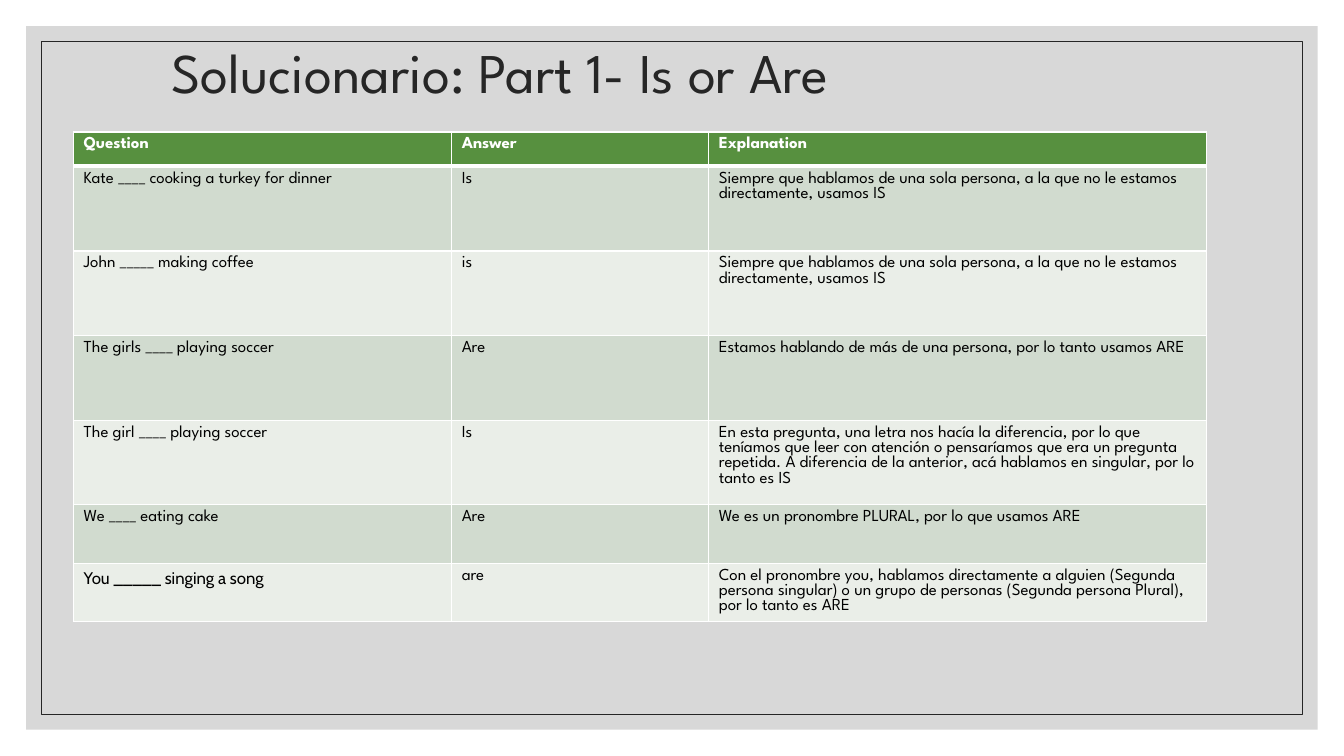
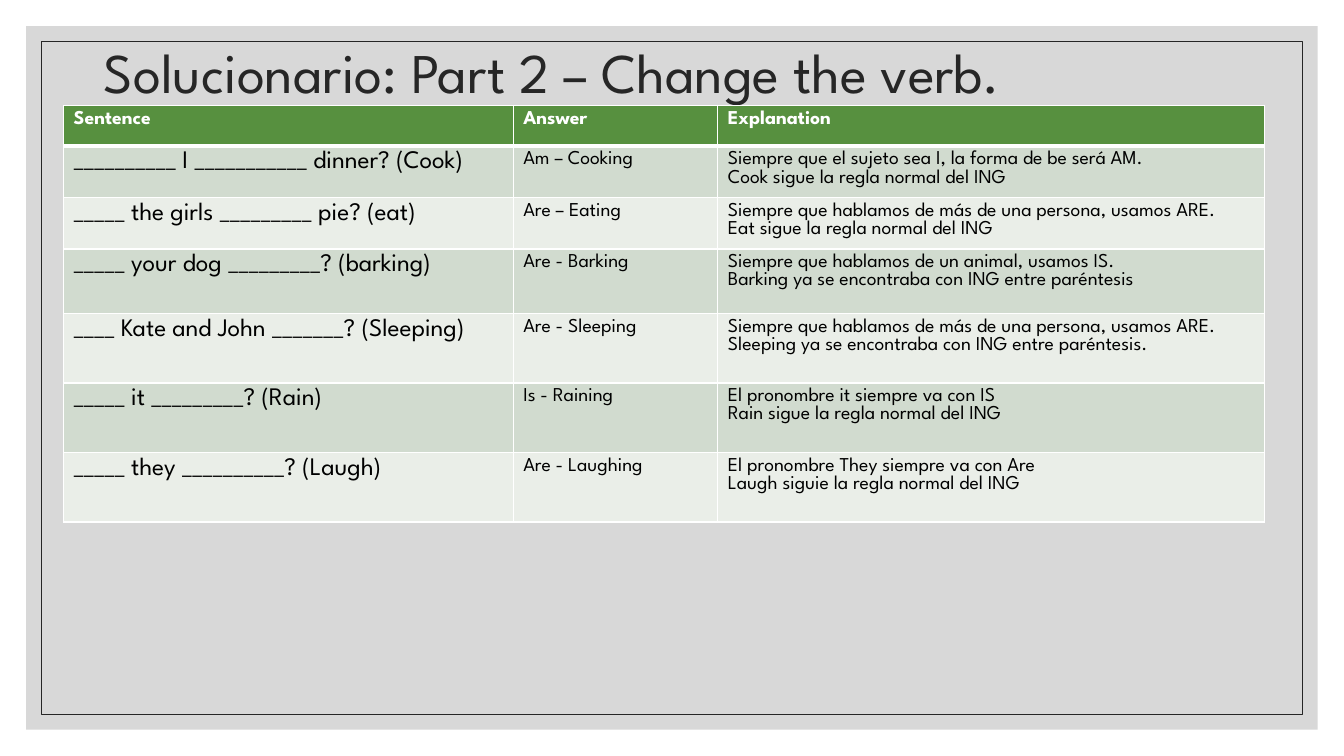
import pptx
import pptx.dml.color
import pptx.enum.shapes
import pptx.enum.text
import pptx.oxml
import pptx.oxml.ns
import pptx.util
from lxml import etree

Inches, Pt = pptx.util.Inches, pptx.util.Pt

# Shared look
FONT = "League Spartan"
WHITE, INK, BLACK = "FFFFFF", "262626", "000000"
PANEL, HEADER = "BFBFBF", "57903F"
BANDS = ("D1DBCF", "EAEEE8")


def rgb(value):
    return pptx.dml.color.RGBColor.from_string(value)


def add_run(p, text, size, color, bold=False, font=FONT):
    r = p.add_run()
    r.text = text
    r.font.size = Pt(size)
    r.font.name = font
    r.font.bold = bold
    r.font.color.rgb = rgb(color)


def add_frame(slide, inset):
    """Rectangle at an equal distance from all slide edges."""
    sp = slide.shapes.add_shape(
        pptx.enum.shapes.MSO_SHAPE.RECTANGLE, Inches(inset), Inches(inset),
        Inches(13.33 - 2 * inset), Inches(7.5 - 2 * inset))
    sp.shadow.inherit = False
    return sp


def build_layout(slide):
    """Draw the grey panel and thin border, then move them to the layout."""
    panel = add_frame(slide, 0.26)
    panel.fill.solid()
    panel.fill.fore_color.rgb = rgb(PANEL)
    panel.line.fill.background()
    color = panel.fill._xPr.find(".//" + pptx.oxml.ns.qn("a:srgbClr"))
    etree.SubElement(color, pptx.oxml.ns.qn("a:alpha"), val="60000")

    border = add_frame(slide, 0.41)
    border.fill.background()
    border.line.color.rgb = rgb(INK)
    border.line.width = Pt(0.5)

    tree = slide.slide_layout.shapes._spTree
    for i, sp in enumerate((panel, border)):
        tree.insert(2 + i, sp._element)


def add_title(slide, text, left):
    sp = slide.shapes.title
    sp.left, sp.top = Inches(left), Inches(0)
    sp.width, sp.height = Inches(11), Inches(1.5)
    tf = sp.text_frame
    tf.word_wrap = True
    tf.auto_size = pptx.enum.text.MSO_AUTO_SIZE.NONE
    tf.vertical_anchor = pptx.enum.text.MSO_ANCHOR.MIDDLE
    p = tf.paragraphs[0]
    p.alignment = pptx.enum.text.PP_ALIGN.LEFT
    p.line_spacing = 0.9
    add_run(p, text, 40, INK)


def set_borders(cell, top=1, bottom=1):
    tc_pr = cell._tc.get_or_add_tcPr()
    widths = {"lnL": 1, "lnR": 1, "lnT": top, "lnB": bottom}
    for i, (side, width) in enumerate(widths.items()):
        tc_pr.insert(i, pptx.oxml.parse_xml(
            f'<a:{side} {pptx.oxml.ns.nsdecls("a")} w="{Pt(width)}">'
            f'<a:solidFill><a:srgbClr val="{WHITE}"/></a:solidFill></a:{side}>'))


def add_answer_table(slide, left, top, cols, heights, rows, size,
                     first_size, fonts):
    """Header row plus banded rows; fonts maps (row, column) to a font."""
    table = slide.shapes.add_table(
        len(rows), len(cols), Inches(left), Inches(top),
        Inches(sum(cols)), Inches(sum(heights))).table
    for column, width in zip(table.columns, cols):
        column.width = Inches(width)
    for i, (row, height) in enumerate(zip(rows, heights)):
        table.rows[i].height = Inches(height)
        header = i == 0
        for j, text in enumerate(row):
            cell = table.cell(i, j)
            cell.fill.solid()
            cell.fill.fore_color.rgb = rgb(HEADER if header else BANDS[(i - 1) % 2])
            set_borders(cell, top=3 if i == 1 else 1, bottom=3 if header else 1)
            tf = cell.text_frame
            for k, line in enumerate(text.split("\n")):
                p = tf.add_paragraph() if k else tf.paragraphs[0]
                font = fonts.get((i, j), FONT)
                add_run(p, line, first_size if j == 0 and not header else size,
                        WHITE if header else BLACK, header, font)


def add_answer_slide(prs, title, title_left, **table):
    slide = prs.slides.add_slide(prs.slide_layouts[5])
    add_title(slide, title, title_left)
    add_answer_table(slide, **table)
    return slide


ONE_PERSON = ("Siempre que hablamos de una sola persona, a la que no le "
              "estamos directamente, usamos IS")
MANY = "Siempre que hablamos de más de una persona, usamos ARE.\n"
RULE = " sigue la regla normal del ING"

IS_OR_ARE = [
    ("Question", "Answer", "Explanation"),
    ("Kate ____ cooking a turkey for dinner", "Is", ONE_PERSON),
    ("John _____ making coffee", "is", ONE_PERSON),
    ("The girls ____ playing soccer", "Are",
     "Estamos hablando de más de una persona, por lo tanto usamos ARE"),
    ("The girl ____ playing soccer", "Is",
     "En esta pregunta, una letra nos hacía la diferencia, por lo que "
     "teníamos que leer con atención o pensaríamos que era un pregunta "
     "repetida. A diferencia de la anterior, acá hablamos en singular, "
     "por lo tanto es IS"),
    ("We ____ eating cake", "Are",
     "We es un pronombre PLURAL, por lo que usamos ARE"),
    ("You _____ singing a song", "are",
     "Con el pronombre you, hablamos directamente a alguien (Segunda "
     "persona singular) o un grupo de personas (Segunda persona Plural), "
     "por lo tanto es ARE"),
]

CHANGE_THE_VERB = [
    ("Sentence", "Answer", "Explanation"),
    ("__________ I ___________ dinner? (Cook)", "Am – Cooking",
     "Siempre que el sujeto sea I, la forma de be será AM.\nCook" + RULE),
    ("_____ the girls _________ pie? (eat)", "Are – Eating",
     MANY + "Eat" + RULE),
    ("_____ your dog _________? (barking)", "Are - Barking",
     "Siempre que hablamos de un animal, usamos IS.\n"
     "Barking ya se encontraba con ING entre paréntesis"),
    ("____ Kate and John _______? (Sleeping)", "Are - Sleeping",
     MANY + "Sleeping ya se encontraba con ING entre paréntesis."),
    ("_____ it _________? (Rain)", "Is - Raining",
     "El pronombre it siempre va con IS\nRain" + RULE),
    ("_____ they __________? (Laugh)", "Are - Laughing",
     "El pronombre They siempre va con Are\n"
     "Laugh siguie la regla normal del ING"),
]
# The fifth sentence keeps the darker band of the alternation


def main():
    prs = pptx.Presentation()
    prs.slide_width, prs.slide_height = Inches(13.33), Inches(7.5)

    # Part 1
    slide = add_answer_slide(
        prs, "Solucionario: Part 1- Is or Are", 1.6,
        left=0.73, top=1.31, cols=(3.75, 2.55, 4.94),
        heights=(0.34, *[0.84] * 4, *[0.58] * 2),
        rows=IS_OR_ARE, size=12, first_size=12, fonts={(6, 0): "Cabin"})
    build_layout(slide)

    # Part 2
    add_answer_slide(
        prs, "Solucionario: Part 2 – Change the verb.", 0.93,
        left=0.63, top=1.05, cols=(4.46, 2.03, 5.42),
        heights=(0.4, 0.51, 0.51, 0.64, *[0.69] * 3),
        rows=CHANGE_THE_VERB, size=14, first_size=18, fonts={})

    prs.save("out.pptx")


if __name__ == "__main__":
    main()
